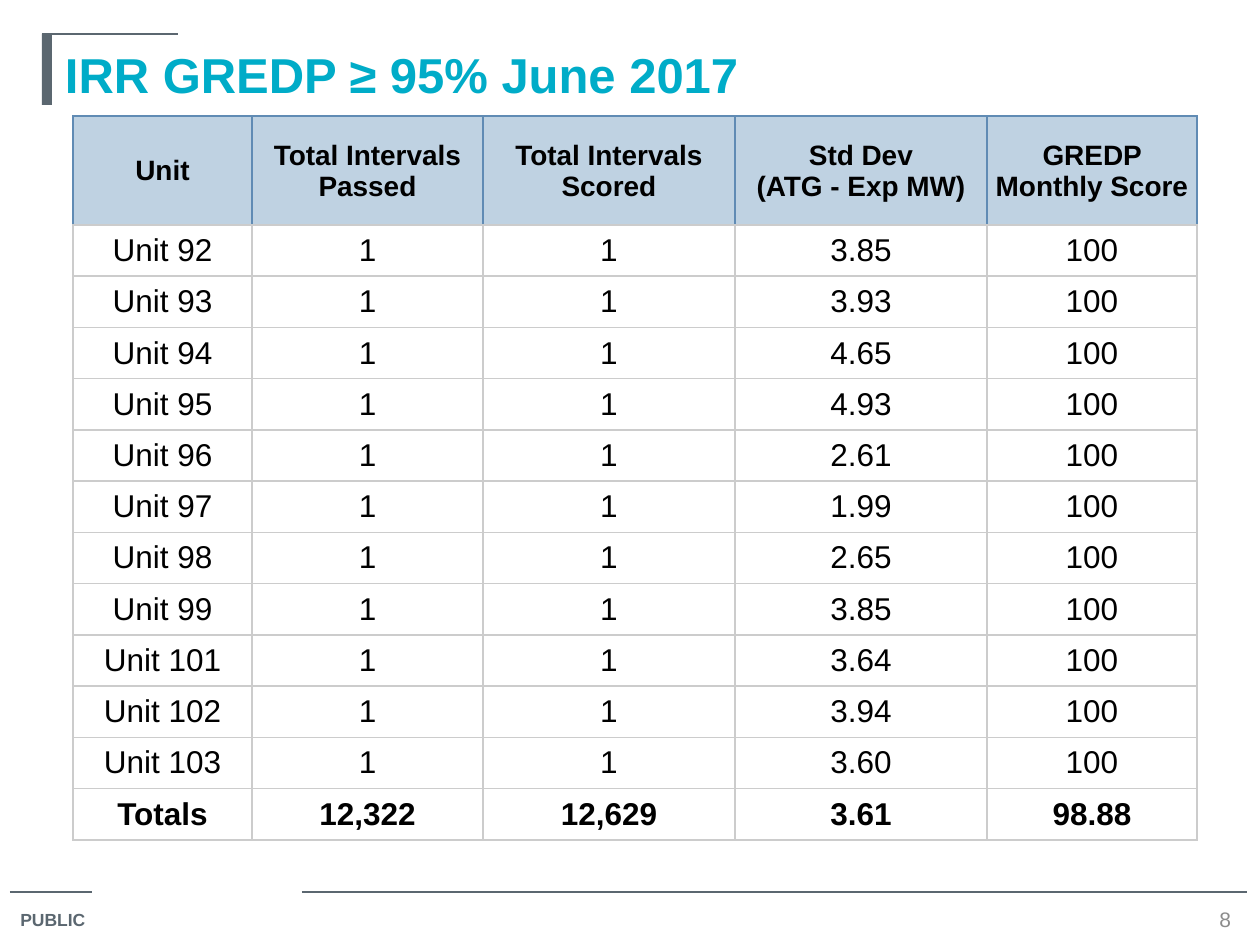
import pptx
import pptx.dml.color
import pptx.enum.shapes
import pptx.enum.text
import pptx.oxml.ns
import pptx.util
from lxml import etree

PX = 914400 / 126
FONT = "Arial"
SLATE, TEAL, GRAY, BLACK = "5B6770", "00ACC8", "8C8C8C", "000000"
HEADER_FILL, HEADER_BORDER, GRID = "BFD2E2", "608BB4", "CCCCCC"
ALIGN = pptx.enum.text.PP_ALIGN
ANCHOR = pptx.enum.text.MSO_ANCHOR

COLUMN_WIDTHS = [179, 231, 252, 252, 210]
TABLE_HEIGHT, HEADER_HEIGHT = 724, 109
HEADERS = ["Unit", "Total Intervals Passed", "Total Intervals Scored",
           "Std Dev\n(ATG - Exp MW)", "GREDP Monthly Score"]
DEVIATIONS = {92: "3.85", 93: "3.93", 94: "4.65", 95: "4.93", 96: "2.61", 97: "1.99",
              98: "2.65", 99: "3.85", 101: "3.64", 102: "3.94", 103: "3.60"}
TOTALS = ["Totals", "12,322", "12,629", "3.61", "98.88"]


def px(length):
    return pptx.util.Emu(round(length * PX))


def color(value):
    return pptx.dml.color.RGBColor.from_string(value)


def write(frame, text, size=18, fill=BLACK, bold=False, align=ALIGN.LEFT):
    frame.text = text
    for paragraph in frame.paragraphs:
        paragraph.alignment = align
        font = paragraph.font
        font.name, font.size, font.bold = FONT, pptx.util.Pt(size), bold
        font.color.rgb = color(fill)


def set_margins(target, left, top, right, bottom):
    target.margin_left, target.margin_top = px(left), px(top)
    target.margin_right, target.margin_bottom = px(right), px(bottom)


def add_rule(slide, left, right, y):
    line = slide.shapes.add_connector(
        pptx.enum.shapes.MSO_CONNECTOR.STRAIGHT, px(left), px(y), px(right), px(y))
    line.line.color.rgb = color(SLATE)
    line.line.width = pptx.util.Pt(0.75)
    etree.SubElement(line._element.spPr, pptx.oxml.ns.qn("a:effectLst"))


def add_bar(slide, left, top, width, height):
    bar = slide.shapes.add_shape(pptx.enum.shapes.MSO_SHAPE.RECTANGLE,
                                 px(left), px(top), px(width), px(height))
    bar.shadow.inherit = False
    bar.fill.solid()
    bar.fill.fore_color.rgb = color(SLATE)
    bar.line.fill.background()


def add_label(slide, text, left, top, width, height, anchor=ANCHOR.TOP, **style):
    frame = slide.shapes.add_textbox(px(left), px(top), px(width), px(height)).text_frame
    frame.word_wrap = False
    frame.vertical_anchor = anchor
    write(frame, text, **style)


def set_title(slide, text):
    title = slide.shapes.title
    title.left, title.top, title.width, title.height = px(53), px(34), px(1165), px(98)
    frame = title.text_frame
    frame.vertical_anchor = ANCHOR.TOP
    set_margins(frame, 12, 10, 12, 6)
    write(frame, text, size=28, fill=TEAL, bold=True)


def set_borders(cell, sides):
    properties = cell._tc.get_or_add_tcPr()
    for side, value in sides.items():
        line = etree.SubElement(properties, pptx.oxml.ns.qn("a:ln" + side), w="12700")
        fill = etree.SubElement(line, pptx.oxml.ns.qn("a:solidFill"))
        etree.SubElement(fill, pptx.oxml.ns.qn("a:srgbClr"), val=value)


def fill_cell(cell, text, header=False, bold=False):
    write(cell.text_frame, text, size=16 if header else 18, bold=bold, align=ALIGN.CENTER)
    cell.vertical_anchor = ANCHOR.MIDDLE
    inset = 1 if bold else 0
    set_margins(cell, inset, inset, inset, 0)
    edge = HEADER_BORDER if header else GRID
    set_borders(cell, {"L": edge, "R": edge, "T": edge, "B": GRID})
    if header:
        cell.fill.solid()
        cell.fill.fore_color.rgb = color(HEADER_FILL)
    else:
        cell.fill.background()


def add_score_table(slide, left, top):
    units = [[f"Unit {unit}", "1", "1", deviation, "100"]
             for unit, deviation in DEVIATIONS.items()]
    rows = [HEADERS, *units, TOTALS]
    table = slide.shapes.add_table(len(rows), len(HEADERS), px(left), px(top),
                                   px(sum(COLUMN_WIDTHS)), px(TABLE_HEIGHT)).table
    table.first_row = table.horz_banding = False
    for column, width in zip(table.columns, COLUMN_WIDTHS):
        column.width = px(width)
    row_height = (TABLE_HEIGHT - HEADER_HEIGHT) / (len(rows) - 1)
    for row, texts in zip(table.rows, rows):
        header = texts is HEADERS
        row.height = px(HEADER_HEIGHT if header else row_height)
        for cell, text in zip(row.cells, texts):
            fill_cell(cell, text, header=header, bold=header or texts is TOTALS)


def main():
    presentation = pptx.Presentation()
    presentation.slide_width, presentation.slide_height = px(1260), px(945)
    slide = presentation.slides.add_slide(presentation.slide_layouts[5])

    # Footer
    add_rule(slide, 10, 92, 892)
    add_rule(slide, 302, 1247, 892)
    add_label(slide, "PUBLIC", 8, 903, 97, 35, size=10, fill=SLATE, bold=True)
    add_label(slide, "8", 1207, 905, 32, 29, anchor=ANCHOR.MIDDLE,
              size=12, fill=GRAY, align=ALIGN.CENTER)

    # Title with its corner accent
    add_bar(slide, 42, 34, 10, 71)
    add_rule(slide, 42, 178, 34)
    set_title(slide, "IRR GREDP ≥ 95% June 2017")

    # Scores by unit
    add_score_table(slide, 73, 116)

    presentation.save("out.pptx")


if __name__ == "__main__":
    main()
